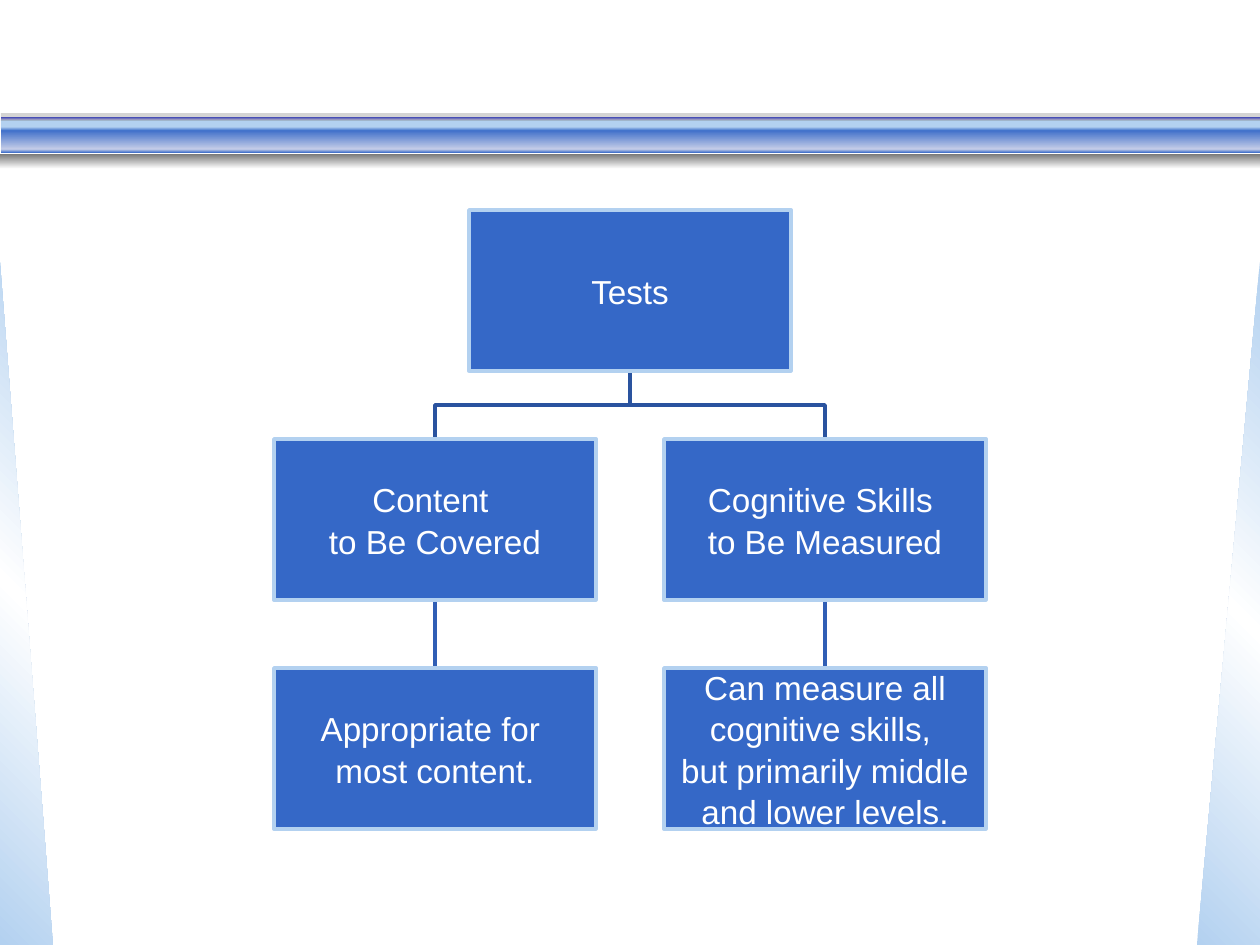
from lxml import etree
from pptx import Presentation
from pptx.dml.color import RGBColor
from pptx.enum.shapes import MSO_CONNECTOR, MSO_SHAPE
from pptx.enum.text import MSO_ANCHOR, PP_ALIGN
from pptx.oxml import parse_xml
from pptx.oxml.ns import qn
from pptx.util import Pt

RECT, WEDGE = MSO_SHAPE.RECTANGLE, MSO_SHAPE.RIGHT_TRIANGLE
LINE = MSO_CONNECTOR.STRAIGHT
MID, MIDDLE = PP_ALIGN.CENTER, MSO_ANCHOR.MIDDLE
SCALE = 914400 / 126
NS = "http://schemas.openxmlformats.org/drawingml/2006/main"
HUE = {
    "white": "FFFFFF", "sky": "B3D1F0", "blue": "3568C7", "pale": "CAD0E9",
    "ink": "1822CD", "lilac": "BABBE7", "gray": "777777",
    "fork": "2A539F", "stem": "305EB5",
}


def emu(px):
    return round(px * SCALE)


def rgb(name):
    return RGBColor.from_string(HUE[name])


class Deck:
    """Hold the style and the current slide, and draw each kind of element."""

    def __init__(self, font, size):
        self.font, self.size = font, Pt(size)
        self.file = Presentation()
        self.file.slide_width, self.file.slide_height = emu(1260), emu(945)
        self.shapes = self.file.slides.add_slide(self.file.slide_layouts[6]).shapes

    def block(self, kind, x, y, wide, high):
        shape = self.shapes.add_shape(kind, emu(x), emu(y), emu(wide), emu(high))
        shape.shadow.inherit = False
        shape.line.fill.background()
        return shape

    def solid(self, shape, hue, alpha=None):
        shape.fill.solid()
        shape.fill.fore_color.rgb = rgb(hue)
        if alpha:
            tint = shape.element.spPr.find(qn("a:solidFill"))[0]
            etree.SubElement(tint, qn("a:alpha"), val=str(alpha * 1000))

    def fade(self, shape, hues, angle=90):
        step = 100000 // (len(hues) - 1)
        stops = "".join(
            f'<a:gs pos="{i * step}"><a:srgbClr val="{HUE[hue]}"/></a:gs>'
            for i, hue in enumerate(hues))
        fill = parse_xml(
            f'<a:gradFill xmlns:a="{NS}" rotWithShape="0"><a:gsLst>{stops}</a:gsLst>'
            f'<a:lin ang="{angle * 60000}" scaled="0"/></a:gradFill>')
        shape.element.spPr.find(qn("a:prstGeom")).addnext(fill)

    def wedge(self, x, wide, angle, flip=False):
        shape = self.block(WEDGE, x, 262, wide, 683)
        self.fade(shape, ("sky", "white", "sky"), angle)
        if flip:
            shape.element.spPr.xfrm.set("flipH", "1")

    def bar(self, x, y, high, hues, alpha=None):
        shape = self.block(RECT, x, y, 1260 - x, high)
        if len(hues) > 1:
            self.fade(shape, hues)
        else:
            self.solid(shape, hues[0], alpha)

    def pen(self, shape, hue):
        shape.line.color.rgb = rgb(hue)
        shape.line.width = Pt(2)

    def fork(self, points):
        first, *rest = [(emu(x), emu(y)) for x, y in points]
        path = self.shapes.build_freeform(*first)
        path.add_line_segments(rest, close=False)
        shape = path.convert_to_shape()
        shape.shadow.inherit = False
        shape.fill.background()
        self.pen(shape, "fork")

    def stem(self, x, top, end):
        link = self.shapes.add_connector(LINE, emu(x), emu(top), emu(x), emu(end))
        etree.SubElement(link.element.spPr, qn("a:effectLst"))
        self.pen(link, "stem")
        return link

    def box(self, mid, y, lines):
        shape = self.block(RECT, mid - WIDE // 2, y, WIDE, HIGH)
        self.solid(shape, "blue")
        self.pen(shape, "sky")
        frame = shape.text_frame
        frame.word_wrap, frame.vertical_anchor = True, MIDDLE
        frame.margin_left = frame.margin_right = emu(1)
        frame.margin_top = frame.margin_bottom = emu(1)
        for i, line in enumerate(lines):
            para = frame.add_paragraph() if i else frame.paragraphs[0]
            para.alignment, para.line_spacing = MID, 1.04
            run = para.add_run()
            run.text = line
            run.font.name, run.font.size = self.font, self.size
            run.font.color.rgb = rgb("white")
        return shape


WIDE, HIGH, GAP = 322, 161, 68
ROOT = 630
TOPS = [210 + i * (HIGH + GAP) for i in range(3)]
BARS = [
    (1, 120, 9, ("sky",)),
    (1, 129, 21, ("blue", "pale")),
    (1, 117, 3, ("ink", "lilac")),
    (1, 149, 4, ("pale", "blue")),
    (1, 127, 4, ("sky", "blue")),
    (0, 154, 15, ("gray", "white")),
    (1, 113, 8, ("gray",), 31),
]
ARMS = {
    435: (("Content ", "to Be Covered"),
          ("Appropriate for ", "most content.")),
    825: (("Cognitive Skills ", "to Be Measured"),
          ("Can measure all cognitive skills, ",
           "but primarily middle and lower levels.")),
}


def main():
    deck = Deck("Arial", 19)
    deck.wedge(0, 53, 315)
    deck.wedge(1197, 63, 45, flip=True)
    for bar in BARS:
        deck.bar(*bar)
    base = TOPS[0] + HIGH
    bend = base + GAP // 2
    for mid, (head, note) in ARMS.items():
        deck.fork([(ROOT, base), (ROOT, bend), (mid, bend), (mid, TOPS[1])])
        link = deck.stem(mid, TOPS[1] + HIGH, TOPS[2])
        link.begin_connect(deck.box(mid, TOPS[1], head), 2)
        link.end_connect(deck.box(mid, TOPS[2], note), 0)
    deck.box(ROOT, TOPS[0], ("Tests",))
    deck.file.save("out.pptx")


if __name__ == "__main__":
    main()
